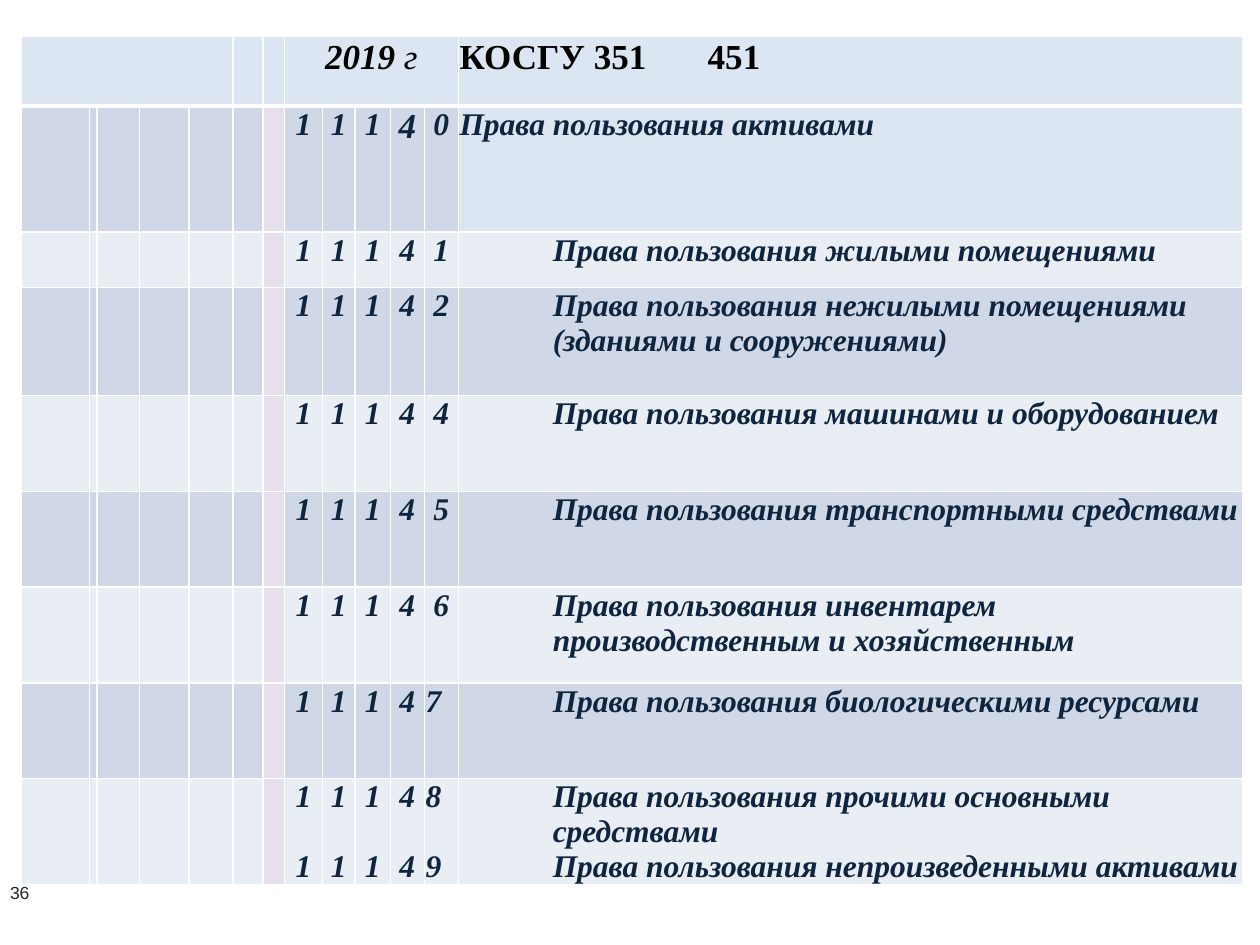
from lxml import etree
from pptx import Presentation
from pptx.dml.color import RGBColor
from pptx.enum.text import MSO_AUTO_SIZE, PP_ALIGN
from pptx.oxml.ns import qn
from pptx.util import Inches, Pt

CENTER, LEFT = PP_ALIGN.CENTER, PP_ALIGN.LEFT
FIT_SHAPE = MSO_AUTO_SIZE.SHAPE_TO_FIT_TEXT
SERIF, SANS = "Times New Roman", "Arial"
WHITE, BLACK, NAVY, OUTLINE, GRAY = "FFFFFF", "000000", "0F243E", "1F497D", "252523"
HEADER_FILL, DARK_BAND, LIGHT_BAND, LILAC = "DCE6F2", "D0D8E8", "E9EDF4", "E6E0EC"

COLUMN_WIDTHS = [0.54, 0.05, 0.34, 0.39, 0.35, 0.24, 0.17, 0.3, 0.26, 0.28, 0.27, 0.27, 6.23]
ROW_HEIGHTS = [0.55, 1, 0.44, 0.86] + [0.76] * 4 + [0.84]
LILAC_COLUMN, CODE_START, NAME_COLUMN = 6, 7, 12
ACCOUNTS = [
    (["11140"], ["Права пользования активами"]),
    (["11141"], ["Права пользования жилыми помещениями"]),
    (["11142"], ["Права пользования нежилыми помещениями (зданиями и сооружениями)"]),
    (["11144"], ["Права пользования машинами и оборудованием"]),
    (["11145"], ["Права пользования транспортными средствами"]),
    (["11146"], ["Права пользования инвентарем производственным и хозяйственным"]),
    (["11147"], ["Права пользования биологическими ресурсами"]),
    (["11148", "11149"], ["Права пользования прочими основными средствами",
                          "Права пользования непроизведенными активами"]),
]


def rgb(color):
    """Return the colour for a hex string."""
    return RGBColor.from_string(color)


def add_line(parent, tag, color, width):
    """Add a solid line element of the given width in points."""
    line = etree.SubElement(parent, qn(tag), w=str(Pt(width)))
    fill = etree.SubElement(line, qn("a:solidFill"))
    etree.SubElement(fill, qn("a:srgbClr"), val=color)


def format_run(run, size, color, italic=True, bold=True):
    """Set the table font and the thin outline of a run."""
    add_line(run.font._element, "a:ln", OUTLINE, 0.75)
    run.font.name, run.font.size = SERIF, Pt(size)
    run.font.bold, run.font.italic = bold, italic
    run.font.color.rgb = rgb(color)


def style_cell(cell, fill, top=1, bottom=1):
    """Give a cell its white borders, fill and narrow margins."""
    properties = cell._tc.get_or_add_tcPr()
    for side, width in (("L", 1), ("R", 1), ("T", top), ("B", bottom)):
        add_line(properties, f"a:ln{side}", WHITE, width)
    cell.fill.solid()
    cell.fill.fore_color.rgb = rgb(fill)
    cell.margin_left = cell.margin_right = cell.margin_top = Inches(0.01)
    cell.margin_bottom = 0


def write_cell(cell, lines, alignment=LEFT, size=18, color=NAVY, italic=True, gap=0):
    """Write one paragraph per line, with a gap in points between them."""
    cell.text_frame.text = "\n".join(lines)
    for index, paragraph in enumerate(cell.text_frame.paragraphs):
        paragraph.alignment = alignment
        if index and gap:
            paragraph.space_before = Pt(gap)
        for run in paragraph.runs:
            format_run(run, size, color, italic)


def fill_header(table):
    """Merge and write the header row."""
    for start in (0, CODE_START):
        table.cell(0, start).merge(table.cell(0, start + 4))
    for column in range(len(COLUMN_WIDTHS)):
        style_cell(table.cell(0, column), HEADER_FILL, bottom=3)
    year = table.cell(0, CODE_START)
    write_cell(year, ["2019 "], CENTER, 20, BLACK)
    suffix = year.text_frame.paragraphs[0].add_run()
    suffix.text = "г"
    format_run(suffix, 20, BLACK, bold=False)
    heading = table.cell(0, NAME_COLUMN)
    write_cell(heading, ["КОСГУ 351\t451"], LEFT, 20, BLACK, italic=False)
    properties = heading.text_frame.paragraphs[0]._p.get_or_add_pPr()
    tabs = etree.SubElement(properties, qn("a:tabLst"))
    etree.SubElement(tabs, qn("a:tab"), pos=str(Inches(1.97)), algn="l")


def fill_account(table, row, codes, names):
    """Write one account row: code digits and account names."""
    first = row == 1
    band = DARK_BAND if row % 2 else LIGHT_BAND
    fills = {LILAC_COLUMN: LILAC}
    if first:
        fills[NAME_COLUMN] = HEADER_FILL
    for column in range(len(COLUMN_WIDTHS)):
        style_cell(table.cell(row, column), fills.get(column, band), top=3 if first else 1)
    for position, digits in enumerate(zip(*codes)):
        alignment = LEFT if digits[0] in "78" else CENTER
        size = 20 if first and position == 3 else 18
        write_cell(table.cell(row, CODE_START + position), digits, alignment, size, gap=20)
    name_cell = table.cell(row, NAME_COLUMN)
    write_cell(name_cell, names)
    if not first:
        name_cell.margin_left = Inches(0.75)


def add_accounts_table(slide, left, top, width, height):
    """Place the table of accounts in the given box."""
    frame = slide.shapes.add_table(len(ROW_HEIGHTS), len(COLUMN_WIDTHS), Inches(left),
                                   Inches(top), Inches(width), Inches(height))
    table = frame.table
    table.first_row = table.horz_banding = False
    for column, column_width in zip(table.columns, COLUMN_WIDTHS):
        column.width = Inches(column_width)
    for row, row_height in zip(table.rows, ROW_HEIGHTS):
        row.height = Inches(row_height)
    fill_header(table)
    for row, (codes, names) in enumerate(ACCOUNTS, start=1):
        fill_account(table, row, codes, names)


def add_page_number(slide, left, top, width, height):
    """Place the page number in the given box."""
    box = slide.shapes.add_textbox(Inches(left), Inches(top), Inches(width), Inches(height))
    text_frame = box.text_frame
    text_frame.word_wrap = True
    text_frame.auto_size = FIT_SHAPE
    text_frame.margin_left = text_frame.margin_right = 0
    text_frame.margin_top = text_frame.margin_bottom = 0
    text_frame.text = "36"
    paragraph = text_frame.paragraphs[0]
    paragraph.line_spacing = Pt(11.5)
    font = paragraph.runs[0].font
    font.name, font.size = SANS, Pt(10)
    font.color.rgb = rgb(GRAY)


def main():
    """Build and save the presentation."""
    presentation = Presentation()
    presentation.slide_width, presentation.slide_height = Inches(10), Inches(7.5)
    slide = presentation.slides.add_slide(presentation.slide_layouts[6])
    add_accounts_table(slide, 0.17, 0.29, sum(COLUMN_WIDTHS), sum(ROW_HEIGHTS))
    add_page_number(slide, 0.08, 7.01, 5.16, 0.28)
    presentation.save("out.pptx")


if __name__ == "__main__":
    main()
